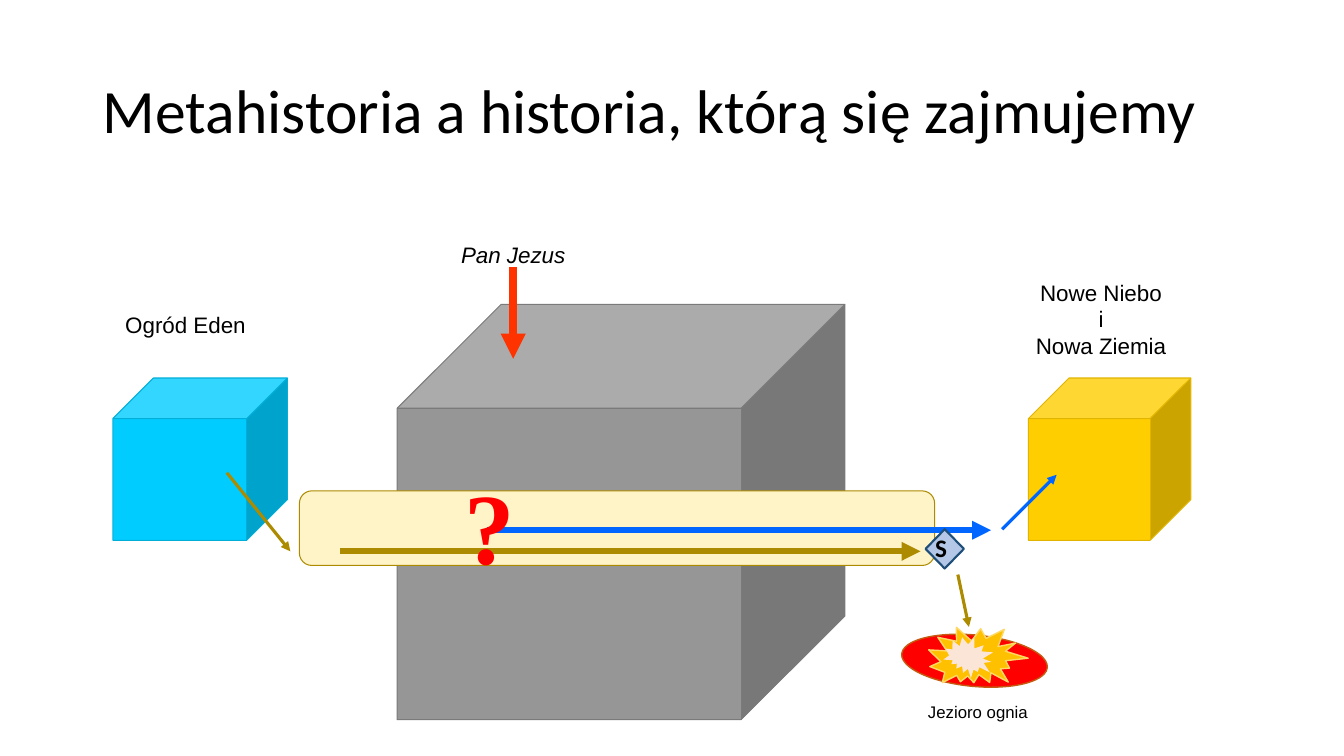
"""Build a slide that contrasts metahistory with the history under study."""
from dataclasses import dataclass, field

from lxml import etree
from pptx import Presentation
from pptx.dml.color import RGBColor
from pptx.enum.shapes import MSO_CONNECTOR, MSO_SHAPE
from pptx.enum.text import MSO_ANCHOR, MSO_AUTO_SIZE, PP_ALIGN
from pptx.oxml.ns import qn
from pptx.util import Inches, Pt

STRAIGHT = MSO_CONNECTOR.STRAIGHT
CUBE = MSO_SHAPE.CUBE
ROUNDED = MSO_SHAPE.ROUNDED_RECTANGLE
DIAMOND = MSO_SHAPE.DIAMOND
DISC = MSO_SHAPE.FLOWCHART_CONNECTOR
BURST = MSO_SHAPE.EXPLOSION2
LEFT, CENTER = PP_ALIGN.LEFT, PP_ALIGN.CENTER
TOP, MIDDLE = MSO_ANCHOR.TOP, MSO_ANCHOR.MIDDLE
FIXED = MSO_AUTO_SIZE.NONE

TITLE = "Metahistoria a historia, którą się zajmujemy"
BLACK, RED = "000000", "FF0000"
OLIVE, BLUE = "AD8B00", "0066FF"
SIDES = ("left", "top", "width", "height")
MARGINS = ("margin_left", "margin_top", "margin_right", "margin_bottom")
Box = tuple[float, float, float, float]
Point = tuple[float, float]


@dataclass
class Figure:
    """A filled preset shape."""
    kind: int
    box: Box
    fill: str
    line: str = ""
    width: float = 0.75
    rotation: float = 0
    adjustment: float | None = None


@dataclass
class Arrow:
    """A straight arrow with its head at the end."""
    start: Point
    end: Point
    color: str
    width: float


@dataclass
class Label:
    """Text with its frame and font settings."""
    text: str
    box: Box
    size: float = 16
    font: str = "Arial"
    color: str = BLACK
    style: dict = field(default_factory=dict)
    align: int = CENTER
    anchor: int = MIDDLE
    margins: Box = (0.03, 0.03, 0.03, 0.03)
    spacing: float = 1.0


TITLE_LABEL = Label(TITLE, (0.92, 0.4, 11.5, 1.45), 44, "Calibri", align=LEFT,
                    margins=(0.1, 0.05, 0.1, 0.05), spacing=0.9)
JUDGEMENT = Figure(DIAMOND, (9.18, 5.25, 0.38, 0.39), "B4C7E7", "1F4E79", 1.5)
JUDGEMENT_LABEL = Label("S", JUDGEMENT.box, 18, "Calibri", style={"bold": True}, align=LEFT,
                        margins=(0, 0.04, 0, 0.04), spacing=0.9)

HISTORY = [
    Figure(CUBE, (3.94, 3.02, 4.44, 4.12), "969696", "7A7A7A"),
    Figure(ROUNDED, (2.97, 4.87, 6.3, 0.74), "FFF4C7", OLIVE, adjustment=0.167),
    Arrow((3.37, 5.47), (9.13, 5.47), OLIVE, 4.5),
    Arrow((4.83, 5.26), (9.83, 5.26), BLUE, 4.5),
]
ETERNITY = [
    Arrow((9.5, 5.7), (9.61, 6.22), OLIVE, 2.25),
    Label("Jezioro ognia", (8.98, 6.93, 1.44, 0.26), 12),
    Figure(CUBE, (10.2, 3.75, 1.61, 1.61), "FFCE00", "E0B400"),
    Arrow((9.94, 5.25), (10.48, 4.71), BLUE, 2.25),
    Figure(CUBE, (1.12, 3.75, 1.73, 1.61), "00CCFF", "00AED8"),
    Arrow((2.25, 4.69), (2.88, 5.47), OLIVE, 2.25),
    Figure(DISC, (8.94, 6.3, 1.45, 0.51), RED, "C55A11", 1, 5.4),
    Figure(BURST, (9.21, 6.18, 0.97, 0.68), "FFC000", "FFD966", 1, 16.2),
    Figure(BURST, (9.38, 6.3, 0.47, 0.45), "FBE5D6", rotation=56.2),
    Label("Nowe Niebo\vi\vNowa Ziemia", (10.2, 2.73, 1.44, 0.87)),
    Label("Ogród Eden", (1.12, 3.06, 1.44, 0.33)),
    Label("?", (4.51, 4.55, 0.73, 1.31), 72, "Times New Roman", RED, {"bold": True},
          LEFT, TOP, (0.1, 0.05, 0.1, 0.05)),
    Arrow((5.09, 2.65), (5.09, 3.56), "FF3300", 6),
    Label("Pan Jezus", (4.37, 2.36, 1.44, 0.33), style={"italic": True}),
]


def rgb(color: str) -> RGBColor:
    """Turn a hex string into a colour."""
    return RGBColor.from_string(color)


def apply(target, values: dict) -> None:
    """Set every named attribute on the target."""
    for name, value in values.items():
        setattr(target, name, value)


def write(shape, label: Label) -> None:
    """Put a label's text and formatting into a shape."""
    frame = shape.text_frame
    apply(frame, {"word_wrap": True, "auto_size": FIXED, "vertical_anchor": label.anchor})
    apply(frame, dict(zip(MARGINS, map(Inches, label.margins))))
    para = frame.paragraphs[0]
    para.text = label.text
    apply(para, {"alignment": label.align, "line_spacing": label.spacing})
    for span in para.runs:
        apply(span.font, {"size": Pt(label.size), "name": label.font, **label.style})
        span.font.color.rgb = rgb(label.color)


def draw_figure(page, figure: Figure):
    """Draw one preset shape."""
    shape = page.shapes.add_shape(figure.kind, *map(Inches, figure.box))
    shape.shadow.inherit = False
    shape.rotation = figure.rotation
    if figure.adjustment is not None:
        shape.adjustments[0] = figure.adjustment
    shape.fill.solid()
    shape.fill.fore_color.rgb = rgb(figure.fill)
    if figure.line:
        shape.line.color.rgb = rgb(figure.line)
        shape.line.width = Pt(figure.width)
    else:
        shape.line.fill.background()
    return shape


def draw_arrow(page, arrow: Arrow) -> None:
    """Draw one arrow without a shadow."""
    line = page.shapes.add_connector(STRAIGHT, *map(Inches, arrow.start + arrow.end))
    line.line.color.rgb = rgb(arrow.color)
    line.line.width = Pt(arrow.width)
    etree.SubElement(line.line._get_or_add_ln(), qn("a:tailEnd"), type="triangle")
    etree.SubElement(line._element.spPr, qn("a:effectLst"))


def draw_label(page, label: Label) -> None:
    """Draw one text box."""
    write(page.shapes.add_textbox(*map(Inches, label.box)), label)


def draw_all(page, items: list[Figure | Arrow | Label]) -> None:
    """Draw mixed items from back to front."""
    painters = {Figure: draw_figure, Arrow: draw_arrow, Label: draw_label}
    for item in items:
        painters[type(item)](page, item)


def main() -> None:
    """Build and save the deck."""
    deck = Presentation()
    apply(deck, {"slide_width": Inches(13.33), "slide_height": Inches(7.5)})
    page = deck.slides.add_slide(deck.slide_layouts.get_by_name("Title Only"))
    title = page.shapes.title
    apply(title, dict(zip(SIDES, map(Inches, TITLE_LABEL.box))))
    write(title, TITLE_LABEL)
    draw_all(page, HISTORY)
    write(draw_figure(page, JUDGEMENT), JUDGEMENT_LABEL)
    draw_all(page, ETERNITY)
    deck.save("out.pptx")


if __name__ == "__main__":
    main()
